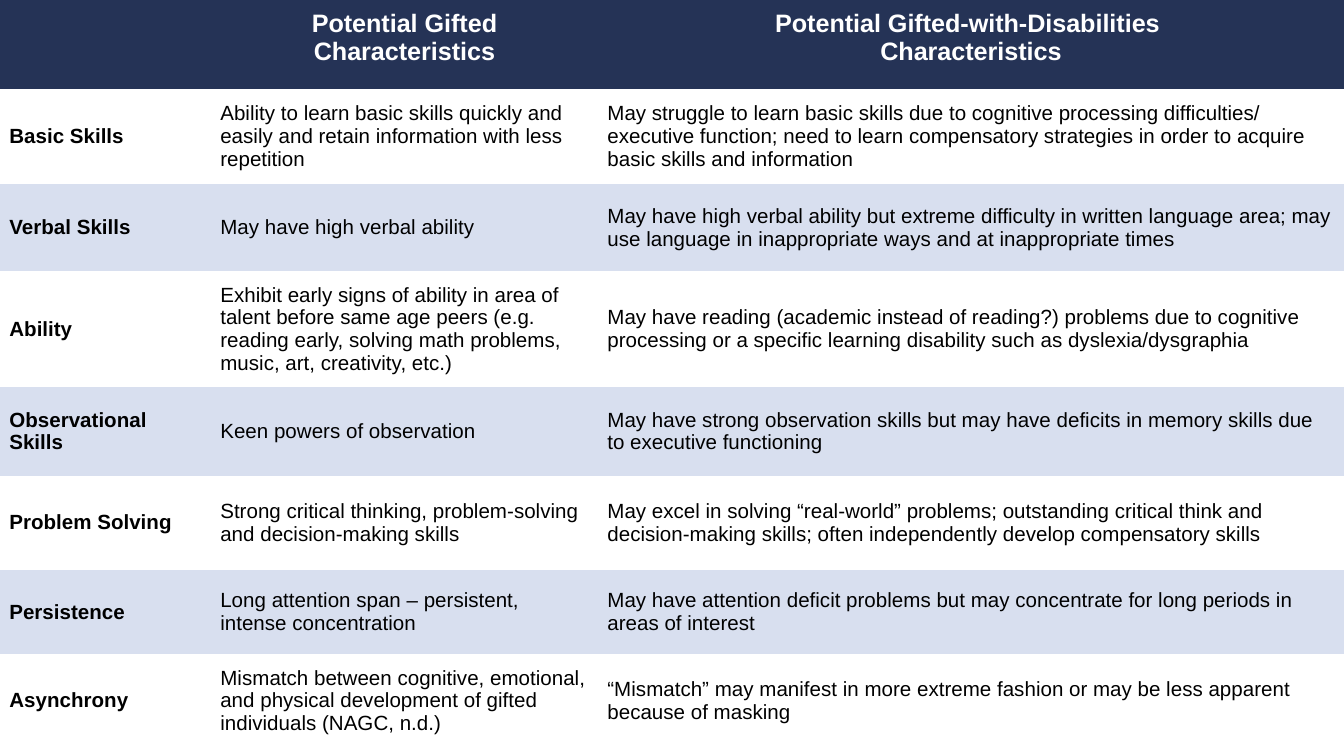
from dataclasses import dataclass
from typing import NamedTuple

from pptx import Presentation
from pptx.dml.color import RGBColor
from pptx.enum.text import MSO_ANCHOR, PP_ALIGN
from pptx.oxml.ns import qn
from pptx.slide import Slide
from pptx.table import Table, _Cell as Cell
from pptx.util import Inches, Pt


@dataclass(frozen=True)
class Theme:
    font: str = "Arial"
    header_size: float = 13.5
    body_size: float = 11
    header_fill: str = "253356"
    header_text: str = "FFFFFF"
    body_text: str = "000000"
    body_fills: tuple[str, str] = ("FFFFFF", "D8DFEF")
    margin: float = 0.07


class Trait(NamedTuple):
    area: str
    gifted: str
    with_disabilities: str


THEME = Theme()
NO_STYLE_NO_GRID = "{2D5ABB26-0587-4C30-8999-92F81FD0307C}"
SLIDE_WIDTH = 10
SLIDE_HEIGHT = SLIDE_WIDTH * 9 / 16
COLUMN_WIDTHS = (1.57, 2.88, 5.55)
ROW_HEIGHTS = (0.75, 0.71, 0.65, 0.86, 0.66, 0.7, 0.63, 0.69)
TABLE_TOP = -0.09

HEADERS = (
    "",
    "Potential Gifted Characteristics",
    "Potential Gifted-with-Disabilities \nCharacteristics",
)
TRAITS = (
    Trait(
        "Basic Skills",
        "Ability to learn basic skills quickly and easily and retain information with less repetition",
        "May struggle to learn basic skills due to cognitive processing difficulties/ executive function; "
        "need to learn compensatory strategies in order to acquire basic skills and information",
    ),
    Trait(
        "Verbal Skills",
        "May have high verbal ability",
        "May have high verbal ability but extreme difficulty in written language area; "
        "may use language in inappropriate ways and at inappropriate times",
    ),
    Trait(
        "Ability",
        "Exhibit early signs of ability in area of talent before same age peers "
        "(e.g. reading early, solving math problems, music, art, creativity, etc.)",
        "May have reading (academic instead of reading?) problems due to cognitive processing "
        "or a specific learning disability such as dyslexia/dysgraphia",
    ),
    Trait(
        "Observational Skills",
        "Keen powers of observation",
        "May have strong observation skills but may have deficits in memory skills due to executive functioning",
    ),
    Trait(
        "Problem Solving",
        "Strong critical thinking, problem-solving and decision-making skills",
        "May excel in solving “real-world” problems; outstanding critical think and decision-making skills; "
        "often independently develop compensatory skills",
    ),
    Trait(
        "Persistence",
        "Long attention span – persistent, intense concentration",
        "May have attention deficit problems but may concentrate for long periods in areas of interest",
    ),
    Trait(
        "Asynchrony",
        "Mismatch between cognitive, emotional, and physical development of gifted individuals (NAGC, n.d.)",
        "“Mismatch” may manifest in more extreme fashion or may be less apparent because of masking",
    ),
)


def fill_cell(cell: Cell, text: str, fill: str, color: str, size: float,
              bold: bool, alignment: PP_ALIGN) -> None:
    cell.fill.solid()
    cell.fill.fore_color.rgb = RGBColor.from_string(fill)
    cell.vertical_anchor = MSO_ANCHOR.MIDDLE
    cell.margin_left = cell.margin_right = Inches(THEME.margin)
    cell.margin_top = cell.margin_bottom = Inches(THEME.margin)
    cell.text = text
    for paragraph in cell.text_frame.paragraphs:
        paragraph.alignment = alignment
        paragraph.font.name = THEME.font
        paragraph.font.size = Pt(size)
        paragraph.font.bold = bold
        paragraph.font.color.rgb = RGBColor.from_string(color)


def add_plain_table(slide: Slide) -> Table:
    """Add a table sized by the grid, without style borders or bands."""
    table = slide.shapes.add_table(
        len(ROW_HEIGHTS), len(COLUMN_WIDTHS), Inches(0), Inches(TABLE_TOP),
        Inches(sum(COLUMN_WIDTHS)), Inches(sum(ROW_HEIGHTS)),
    ).table
    table._tbl.tblPr.find(qn("a:tableStyleId")).text = NO_STYLE_NO_GRID
    table.horz_banding = False
    for column, width in zip(table.columns, COLUMN_WIDTHS):
        column.width = Inches(width)
    for row, height in zip(table.rows, ROW_HEIGHTS):
        row.height = Inches(height)
    return table


def main() -> None:
    presentation = Presentation()
    presentation.slide_width = Inches(SLIDE_WIDTH)
    presentation.slide_height = Inches(SLIDE_HEIGHT)
    slide = presentation.slides.add_slide(presentation.slide_layouts[6])
    table = add_plain_table(slide)

    for column, header in enumerate(HEADERS):
        fill_cell(table.cell(0, column), header, THEME.header_fill, THEME.header_text,
                  THEME.header_size, True, PP_ALIGN.CENTER)
    for index, trait in enumerate(TRAITS):
        fill = THEME.body_fills[index % 2]
        for column, text in enumerate(trait):
            fill_cell(table.cell(index + 1, column), text, fill, THEME.body_text,
                      THEME.body_size, column == 0, PP_ALIGN.LEFT)

    presentation.save("out.pptx")


if __name__ == "__main__":
    main()
